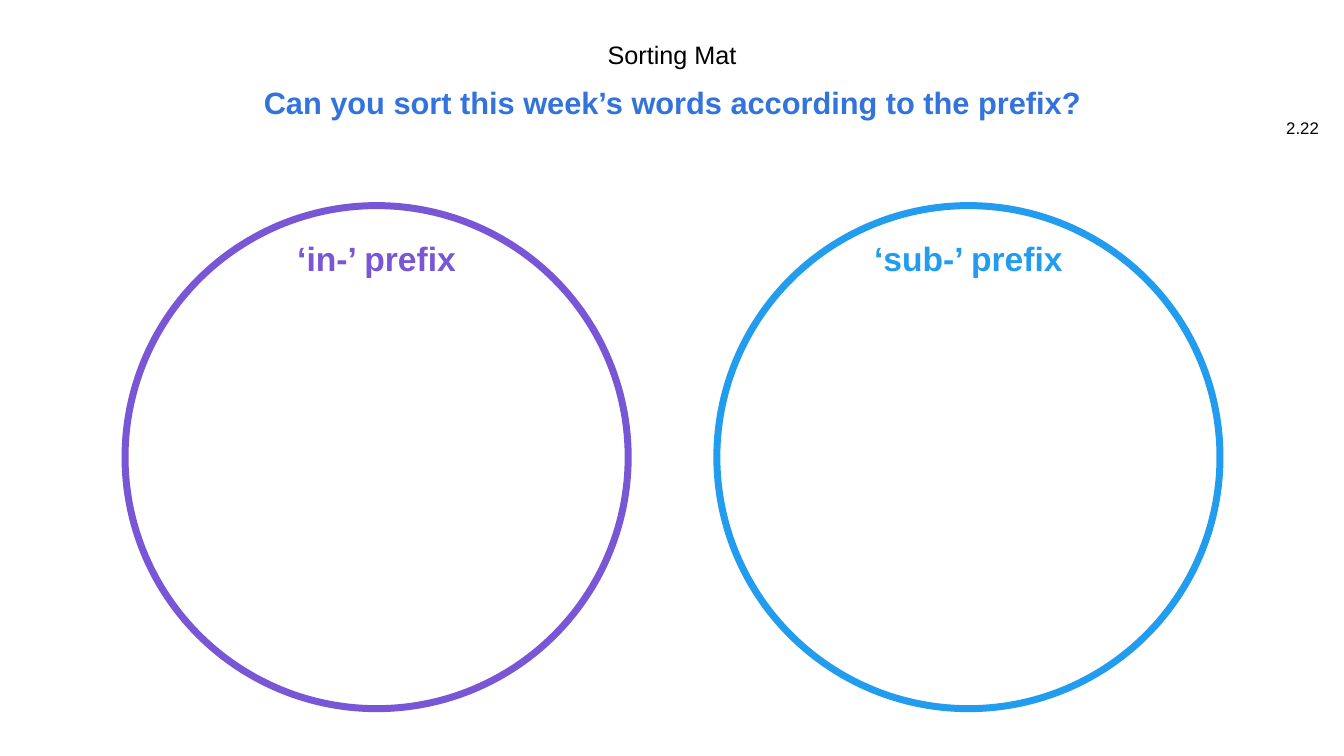
"""Build a sorting mat with one circle for each prefix."""
import pptx
import pptx.dml.color
import pptx.enum.shapes
import pptx.enum.text
import pptx.util

Inches = pptx.util.Inches
Align = pptx.enum.text.PP_ALIGN
Anchor = pptx.enum.text.MSO_ANCHOR

SIZE = 4.99
TOP = 2.04
LABEL = 2.64
RINGS = [
    (1.24, "‘in-’ prefix", "7956D6"),
    (7.11, "‘sub-’ prefix", "219CEE"),
]


def color(code):
    """Return the colour for a hex string."""
    return pptx.dml.color.RGBColor.from_string(code)


def assign(target, values):
    """Set each attribute named in a dict."""
    for name, value in values.items():
        setattr(target, name, value)


def add_text(slide, box, text, size, code="000000", bold=False,
             align=Align.CENTER, anchor=Anchor.MIDDLE, spacing=1.0):
    """Add a one-paragraph text box."""
    frame = slide.shapes.add_textbox(*map(Inches, box)).text_frame
    assign(frame, {"word_wrap": True, "vertical_anchor": anchor})
    para = frame.paragraphs[0]
    assign(para, {"text": text, "alignment": align, "line_spacing": spacing})
    font = para.runs[0].font
    assign(font, {"name": "Arial", "size": pptx.util.Pt(size), "bold": bold})
    font.color.rgb = color(code)


def add_ring(slide, left, text, code):
    """Add an outlined circle with its label centred near the top."""
    box = map(Inches, (left, TOP, SIZE, SIZE))
    ring = slide.shapes.add_shape(pptx.enum.shapes.MSO_SHAPE.OVAL, *box)
    ring.shadow.inherit = False
    ring.fill.background()
    ring.line.color.rgb = color(code)
    ring.line.width = pptx.util.Pt(5)
    middle = left + (SIZE - LABEL) / 2
    add_text(slide, (middle, 2.31, LABEL, 0.5), text, 24, code, True,
             anchor=Anchor.TOP)


def main():
    """Build and save the slide."""
    deck = pptx.Presentation()
    assign(deck, {"slide_width": Inches(13.33), "slide_height": Inches(7.5)})
    slide = deck.slides.add_slide(deck.slide_layouts[6])
    add_text(slide, (12.55, 1.07, 0.63, 0.4), "2.22", 12, align=Align.RIGHT)
    add_text(slide, (3.82, 0.37, 5.69, 0.35), "Sorting Mat", 18,
             anchor=Anchor.TOP, spacing=0.9)
    add_text(slide, (2.09, 0.84, 9.16, 0.4),
             "Can you sort this week’s words according to the prefix?",
             22, "3373DC", True, spacing=0.9)
    for left, text, code in RINGS:
        add_ring(slide, left, text, code)
    deck.save("out.pptx")


if __name__ == "__main__":
    main()
